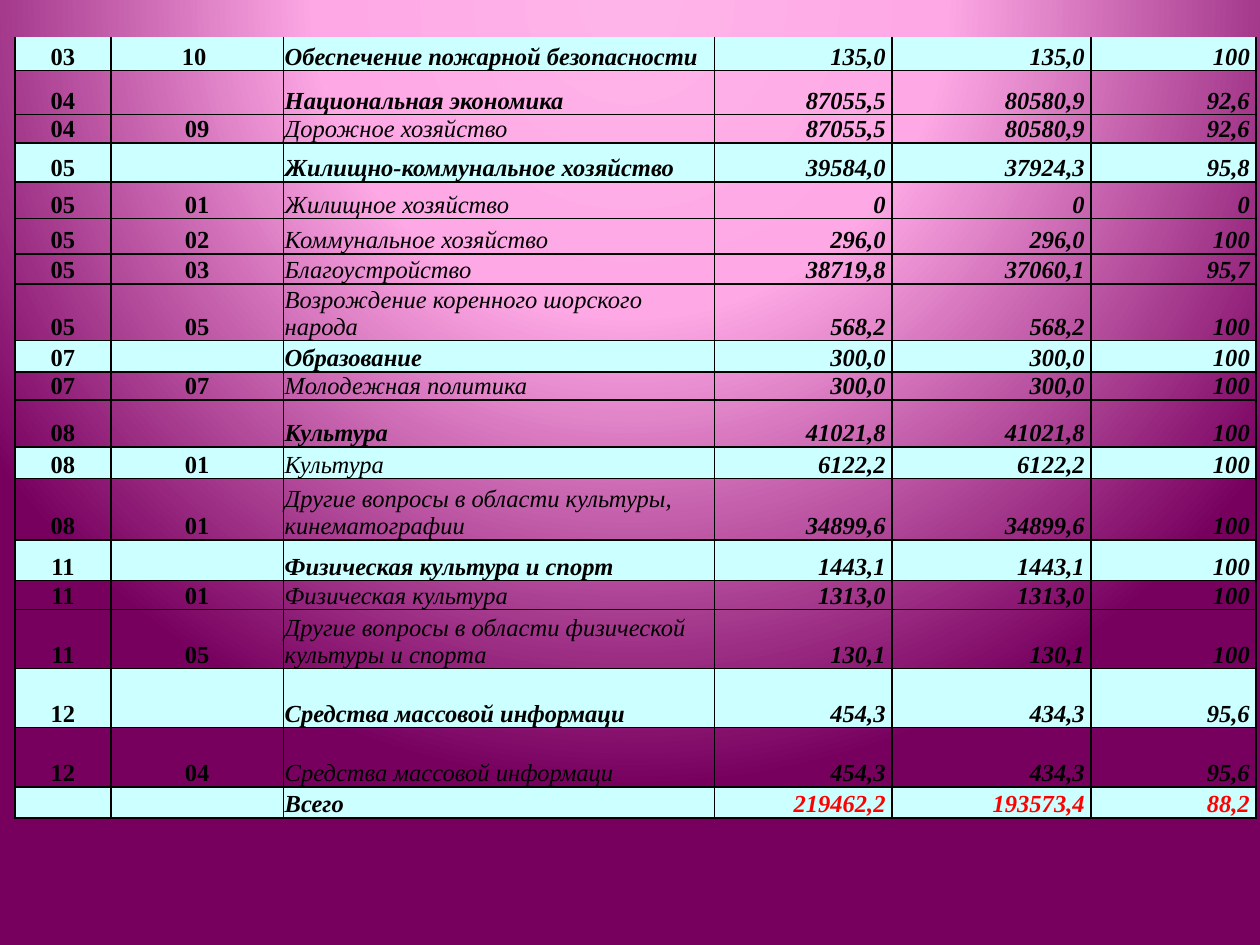
"""Build the slide with the table of budget spending by section."""
from lxml import etree
from pptx import Presentation
from pptx import util as u
from pptx.dml.color import RGBColor
from pptx.enum import text
from pptx.oxml import parse_xml
from pptx.oxml.ns import qn

BLACK = RGBColor(0x00, 0x00, 0x00)
RED = RGBColor(0xFF, 0x00, 0x00)
CYAN = RGBColor(0xCC, 0xFF, 0xFF)
GLOW = RGBColor(0xFF, 0xB4, 0xE9)
PINK = RGBColor(0xFE, 0xA8, 0xE5)
PLUM = RGBColor(0x77, 0x00, 0x5F)
LEFT, CENTER, RIGHT = text.PP_ALIGN.LEFT, text.PP_ALIGN.CENTER, text.PP_ALIGN.RIGHT

COLUMN_WIDTHS = [0.76, 1.37, 3.42, 1.41, 1.58, 1.31]
ALIGNMENTS = [CENTER, CENTER, LEFT, RIGHT, RIGHT, RIGHT]
# height, highlighted, section, subsection, name, plan, actual, percent
BUDGET = [
    (0.27, True, "03", "10 ", "Обеспечение пожарной безопасности", "135,0", "135,0", "100"),
    (0.35, False, "04", "", "Национальная экономика", "87055,5", "80580,9", "92,6"),
    (0.21, False, "04", "09", "Дорожное хозяйство", "87055,5", "80580,9", "92,6"),
    (0.31, True, "05", "", "Жилищно-коммунальное хозяйство", "39584,0", "37924,3", "95,8"),
    (0.29, False, "05", "01", "Жилищное хозяйство", "0", "0", "0"),
    (0.28, False, "05", "02", "Коммунальное хозяйство", "296,0", "296,0", "100"),
    (0.24, False, "05", "03", "Благоустройство", "38719,8", "37060,1", "95,7"),
    (0.45, False, "05", "05", "Возрождение коренного шорского народа", "568,2", "568,2", "100"),
    (0.21, True, "07", "", "Образование", "300,0", "300,0", "100"),
    (0.21, False, "07", "07", "Молодежная политика", "300,0", "300,0", "100"),
    (0.37, False, "08", "", "Культура", "41021,8", "41021,8", "100"),
    (0.25, True, "08", "01", "Культура", "6122,2", "6122,2", "100"),
    (0.49, False, "08", "01", "Другие вопросы в области культуры, кинематографии",
     "34899,6", "34899,6", "100"),
    (0.32, True, "11", "", "Физическая культура и спорт", "1443,1", "1443,1", "100"),
    (0.23, False, "11", "01", "Физическая культура", "1313,0", "1313,0", "100"),
    (0.47, False, "11", "05", "Другие вопросы в области физической культуры и спорта",
     "130,1", "130,1", "100"),
    (0.47, True, "12", "", "Средства массовой информаци", "454,3", "434,3", "95,6"),
    (0.47, False, "12", "04", "Средства массовой информаци", "454,3", "434,3", "95,6"),
    (0.21, True, "", "", "Всего", "219462,2", "193573,4", "88,2"),
]


def write(cell, content, align=LEFT, bold=True, italic=False, color=BLACK):
    cell.vertical_anchor = text.MSO_ANCHOR.BOTTOM
    cell.margin_left = cell.margin_top = u.Inches(0.01)
    cell.margin_right = u.Inches(0.05 if align == RIGHT else 0.01)
    cell.margin_bottom = 0
    paragraph = cell.text_frame.paragraphs[0]
    paragraph.alignment = align
    if not content:
        etree.SubElement(paragraph._p, qn("a:endParaRPr"), sz="1400")
        return
    run = paragraph.add_run()
    run.text = content
    run.font.name = "Times New Roman"
    run.font.size = u.Pt(14)
    run.font.bold = bold
    run.font.italic = italic
    run.font.color.rgb = color


def draw_borders(cell, has_top):
    properties = cell._tc.get_or_add_tcPr()
    for side in "LRTB":
        line = etree.SubElement(properties, qn(f"a:ln{side}"), w=str(u.Pt(1)))
        if side == "T" and not has_top:
            etree.SubElement(line, qn("a:noFill"))
        else:
            ink = etree.SubElement(line, qn("a:solidFill"))
            etree.SubElement(ink, qn("a:srgbClr"), val=str(BLACK))


deck = Presentation()
deck.slide_width, deck.slide_height = u.Inches(10), u.Inches(7.5)
slide = deck.slides.add_slide(deck.slide_layouts[6])

slide.background.fill.gradient()
backdrop = slide._element.xpath(".//p:bgPr/a:gradFill")[0]
stops = "".join(
    f'<a:gs pos="{position * 1000}"><a:srgbClr val="{color}"/></a:gs>'
    for position, color in ((0, GLOW), (40, PINK), (100, PLUM))
)
backdrop.getparent().replace(backdrop, parse_xml(
    '<a:gradFill xmlns:a="http://schemas.openxmlformats.org/drawingml/2006/main" '
    f'rotWithShape="1"><a:gsLst>{stops}</a:gsLst><a:path path="circle">'
    '<a:fillToRect l="50000" t="-80000" r="50000" b="180000"/></a:path></a:gradFill>'
))

budget = slide.shapes.add_table(
    len(BUDGET), len(COLUMN_WIDTHS), u.Inches(0.12), u.Inches(0.29),
    u.Inches(sum(COLUMN_WIDTHS)), u.Inches(sum(entry[0] for entry in BUDGET)),
).table
budget.first_row = budget.horz_banding = False
for column, width in zip(budget.columns, COLUMN_WIDTHS):
    column.width = u.Inches(width)

for row, (height, highlighted, *values) in enumerate(BUDGET):
    budget.rows[row].height = u.Inches(height)
    is_heading = values[1] == "" or row == 0
    is_total = values[0] == ""
    for col, (value, align) in enumerate(zip(values, ALIGNMENTS)):
        cell = budget.cell(row, col)
        write(cell, value, align=align, bold=col != 2 or is_heading, italic=col >= 2,
              color=RED if is_total and col > 2 else BLACK)
        draw_borders(cell, has_top=row > 0)
        if highlighted:
            cell.fill.solid()
            cell.fill.fore_color.rgb = CYAN
        else:
            cell.fill.background()

deck.save("out.pptx")
